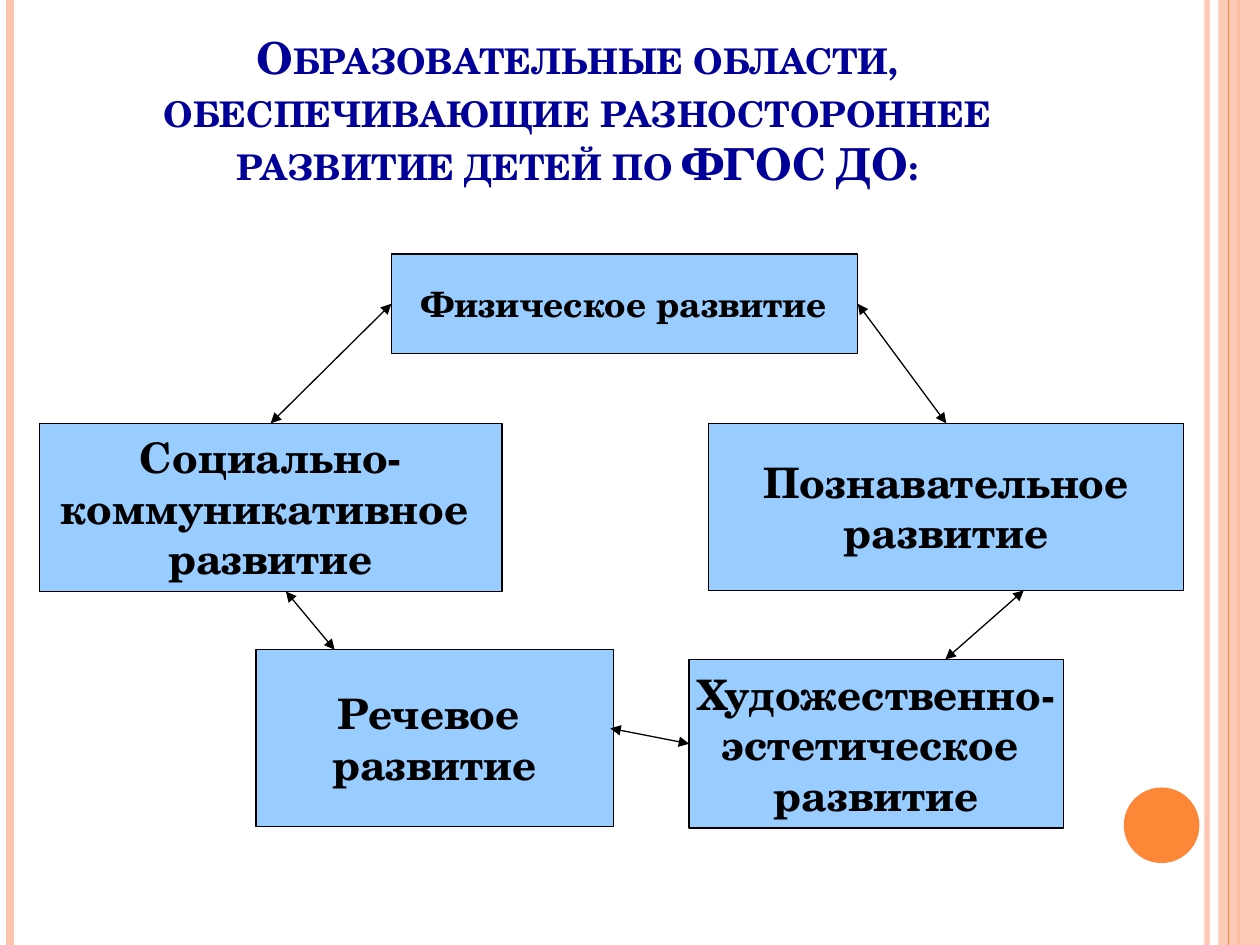
from lxml import etree
from pptx import Presentation
from pptx.dml.color import RGBColor
from pptx.enum import shapes, text
from pptx.oxml.ns import qn
from pptx.util import Pt

FONT = "TeX Gyre Schola"
COLORS = {"title": "000099", "box": "99CCFF", "ink": "000000",
          "peach": "FEC3AE", "orange": "FE8637"}
WIDTH, HEIGHT = 720, 540

TITLE = "Образовательные области, обеспечивающие разностороннее развитие детей по ФГОС ДО:"

# x, width, colour, opacity in percent
STRIPES = [(689.8, 3, "peach", 93), (5.8, 4.5, "peach", 100), (707.8, 1.5, "orange", 100)]
BAND = (696.2, 0, 23.8, HEIGHT)
THIN_STRIPE = (702, 0.75, "orange", 100)
DISC = (642.2, 450, 43.2, 43.2)

# name: (left, top, width, height), text size, lines
AREAS = {
    "physical": ((223.6, 145.2, 266.6, 56.8), 20, ["Физическое развитие"]),
    "artistic": ((393.8, 376.8, 213.8, 96.4), 24,
                 ["Художественно-", "эстетическое ", "развитие"]),
    "cognitive": ((405, 241.9, 271.4, 95.5), 24, [" Познавательное ", "развитие"]),
    "speech": ((146.3, 371.3, 204.2, 101.2), 24, ["Речевое ", "развитие"]),
    "social": ((22.5, 241.9, 264.4, 96.2), 24,
               ["Социально-", "коммуникативное ", "развитие"]),
}

# Each end is either (area, connection site) or a point (x, y)
TOP, LEFT, RIGHT = 0, 1, 3
ARROWS = [
    (("physical", LEFT), ("social", TOP)),
    (("physical", RIGHT), ("cognitive", TOP)),
    ((163.4, 338), (191.2, 371.3)),
    ((348.8, 416.2), ("artistic", LEFT)),
    ((540.2, 376.8), (585, 337.4)),
]


def color(name):
    return RGBColor.from_string(COLORS[name])


def set_opacity(parent, percent):
    for element in parent.iter(qn("a:srgbClr")):
        etree.SubElement(element, qn("a:alpha")).set("val", str(percent * 1000))


def add_line(slide, start, end, width, color_name):
    line = slide.shapes.add_connector(
        shapes.MSO_CONNECTOR.STRAIGHT, *(Pt(value) for value in (*start, *end)))
    line.line.width = Pt(width)
    line.line.color.rgb = color(color_name)
    etree.SubElement(line._element.spPr, qn("a:effectLst"))
    return line


def add_stripe(slide, x, width, color_name, opacity):
    stripe = add_line(slide, (x, 0), (x, HEIGHT), width, color_name)
    if opacity < 100:
        set_opacity(stripe._element.spPr, opacity)


def add_filled(slide, kind, bounds, color_name):
    shape = slide.shapes.add_shape(kind, *(Pt(value) for value in bounds))
    shape.shadow.inherit = False
    shape.fill.solid()
    shape.fill.fore_color.rgb = color(color_name)
    shape.line.fill.background()
    return shape


def style_font(font, size, color_name):
    font.name = FONT
    font.size = Pt(size)
    font.bold = True
    font.color.rgb = color(color_name)


def add_decoration(slide):
    for stripe in STRIPES:
        add_stripe(slide, *stripe)
    band = add_filled(slide, shapes.MSO_SHAPE.RECTANGLE, BAND, "peach")
    set_opacity(band._element.spPr, 87)
    add_stripe(slide, *THIN_STRIPE)
    add_filled(slide, shapes.MSO_SHAPE.OVAL, DISC, "orange")


def fill_title(title):
    title.left, title.top, title.width, title.height = Pt(36), Pt(21.6), Pt(588), Pt(90)
    frame = title.text_frame
    frame.text = TITLE
    frame.word_wrap = True
    frame.auto_size = text.MSO_AUTO_SIZE.NONE
    frame.vertical_anchor = text.MSO_ANCHOR.BOTTOM
    paragraph = frame.paragraphs[0]
    paragraph.alignment = text.PP_ALIGN.CENTER
    run = paragraph.runs[0]
    style_font(run.font, 25.2, "title")
    run.font._element.set("cap", "small")


def add_area(slide, bounds, size, lines):
    box = add_filled(slide, shapes.MSO_SHAPE.RECTANGLE, bounds, "box")
    box.line.color.rgb = color("ink")
    box.line.width = Pt(0.75)
    frame = box.text_frame
    frame.text = "\n".join(lines)
    frame.word_wrap = False
    frame.vertical_anchor = text.MSO_ANCHOR.MIDDLE
    for paragraph in frame.paragraphs:
        paragraph.alignment = text.PP_ALIGN.CENTER
        style_font(paragraph.font, size, "ink")
    return box


def add_arrow(slide, boxes, start, end):
    """Draw a two-headed arrow, joined to a box wherever an end names one."""
    points = [(0, 0) if stop[0] in boxes else stop for stop in (start, end)]
    arrow = add_line(slide, *points, 0.75, "ink")
    for stop, connect in ((start, arrow.begin_connect), (end, arrow.end_connect)):
        if stop[0] in boxes:
            connect(boxes[stop[0]], stop[1])
    outline = arrow.line._get_or_add_ln()
    for tag in ("a:headEnd", "a:tailEnd"):
        etree.SubElement(outline, qn(tag)).set("type", "triangle")


def main():
    presentation = Presentation()
    presentation.slide_width, presentation.slide_height = Pt(WIDTH), Pt(HEIGHT)
    slide = presentation.slides.add_slide(presentation.slide_layouts.get_by_name("Title Only"))
    add_decoration(slide)
    fill_title(slide.shapes.title)
    boxes = {name: add_area(slide, *area) for name, area in AREAS.items()}
    for start, end in ARROWS:
        add_arrow(slide, boxes, start, end)
    presentation.save("out.pptx")


if __name__ == "__main__":
    main()
